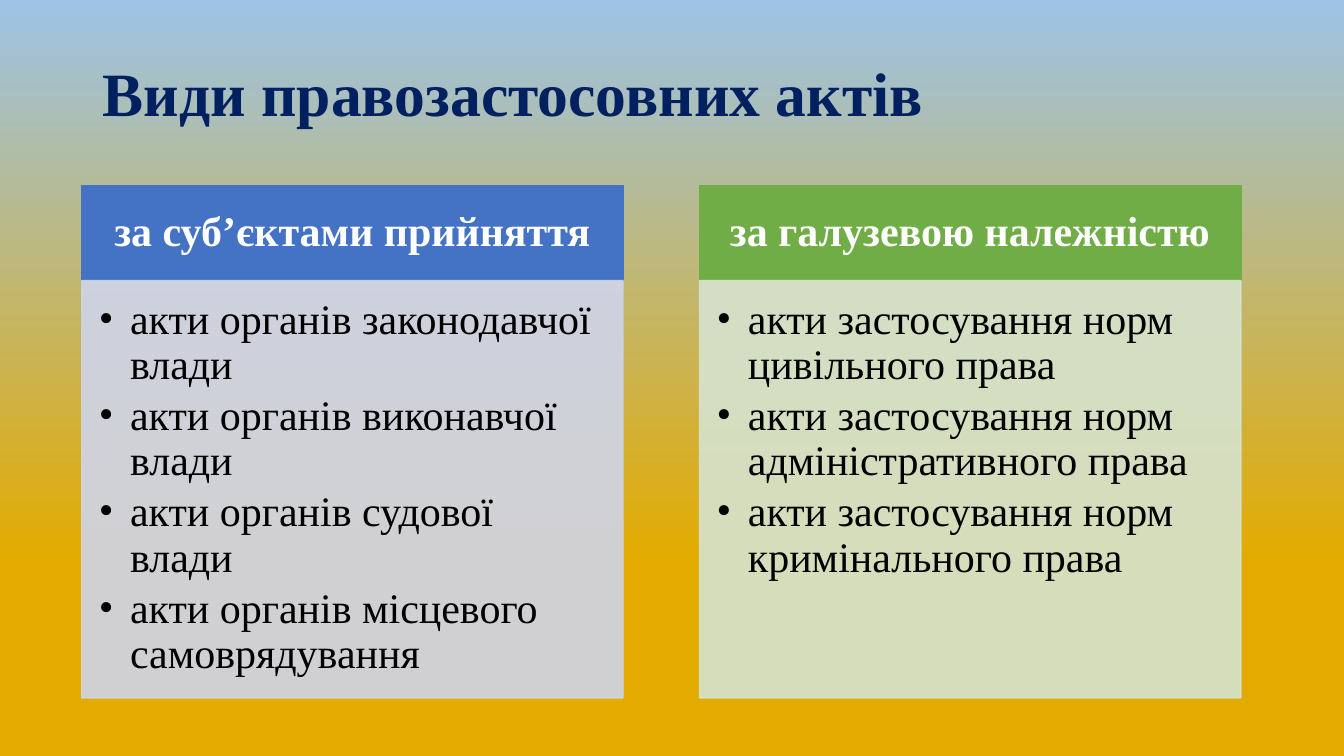
from lxml import etree
from pptx import Presentation
from pptx import util as u
from pptx.dml.color import RGBColor
from pptx.enum import shapes, text
from pptx.oxml.ns import qn

GOLD = RGBColor(0xE3, 0xAB, 0x00)
SKY = RGBColor(0x9D, 0xC3, 0xE6)
NAVY = RGBColor(0x00, 0x20, 0x60)
BLUE = RGBColor(0x44, 0x72, 0xC4)
GREEN = RGBColor(0x70, 0xAD, 0x47)
PALE_BLUE = RGBColor(0xCF, 0xD5, 0xEA)
PALE_GREEN = RGBColor(0xD5, 0xE3, 0xCF)
WHITE = RGBColor(0xFF, 0xFF, 0xFF)
BLACK = RGBColor(0x00, 0x00, 0x00)

FONT = "Times New Roman"
INDENT = u.Inches(0.31)

# Grid: 100 columns by 100 rows over the slide
LEFT, STEP, WIDE = 6.08, 45.97, 40.28
TOP, HEAD, BODY = 24.53, 12.6, 55.2

# Text styles of the three kinds of element
TITLE = dict(size=44, color=NAVY, bold=True)
HEADING = dict(color=WHITE, bold=True, align=text.PP_ALIGN.CENTER,
               pads=(0.23, 0.13, 0.23, 0.13))
LIST = dict(anchor=text.MSO_ANCHOR.TOP, pads=(0.17, 0.17, 0.23, 0.26),
            after=4, bullet=True)

# Heading, heading fill, list fill, list items
CARDS = [
    ("за суб’єктами прийняття", BLUE, PALE_BLUE,
     ["акти органів законодавчої влади",
      "акти органів виконавчої влади",
      "акти органів судової влади",
      "акти органів місцевого самоврядування"]),
    ("за галузевою належністю", GREEN, PALE_GREEN,
     ["акти застосування норм цивільного права",
      "акти застосування норм адміністративного права",
      "акти застосування норм кримінального права"]),
]


def write(frame, lines, size=30, color=BLACK, bold=False,
          align=text.PP_ALIGN.LEFT, anchor=text.MSO_ANCHOR.MIDDLE,
          pads=(0.1, 0.05, 0.1, 0.05), after=0, bullet=False):
    """Fill a text frame, one paragraph for each line."""
    frame.word_wrap = True
    frame.vertical_anchor = anchor
    (frame.margin_left, frame.margin_top,
     frame.margin_right, frame.margin_bottom) = map(u.Inches, pads)
    for i, line in enumerate(lines):
        par = frame.add_paragraph() if i else frame.paragraphs[0]
        par.alignment, par.line_spacing = align, 0.9
        par.space_before, par.space_after = u.Pt(0), u.Pt(after)
        run = par.add_run()
        run.text = line
        run.font.name, run.font.size, run.font.bold = FONT, u.Pt(size), bold
        run.font.color.rgb = color
        if bullet:
            props = par._p.get_or_add_pPr()
            props.set("marL", str(INDENT))
            props.set("indent", str(-INDENT))
            etree.SubElement(props, qn("a:buFont"), typeface=FONT)
            etree.SubElement(props, qn("a:buChar"), char="•")


class Deck:
    """Holds the current slide and draws on its grid."""

    def __init__(self):
        self.prs = Presentation()
        self.prs.slide_width = u.Inches(13.33)
        self.prs.slide_height = u.Inches(7.5)
        self.slide = self.prs.slides.add_slide(self.prs.slide_layouts[5])

    def place(self, col, row, cols, rows):
        """Turn grid units into left, top, width and height."""
        wide, high = self.prs.slide_width / 100, self.prs.slide_height / 100
        return int(col * wide), int(row * high), int(cols * wide), int(rows * high)

    def backdrop(self, low, high, start):
        """Blend upwards from low to high, beginning at start."""
        fill = self.slide.background.fill
        fill.gradient()
        fill.gradient_angle = 90
        for stop, color, pos in zip(fill.gradient_stops, (low, high), (start, 1)):
            stop.color.rgb, stop.position = color, pos

    def title(self, line, *spot):
        box = self.slide.shapes.title
        box.left, box.top, box.width, box.height = self.place(*spot)
        write(box.text_frame, [line], **TITLE)

    def panel(self, lines, paint, spot, style, alpha=100):
        """Draw a filled rectangle with text; alpha is opacity in percent."""
        box = self.slide.shapes.add_shape(shapes.MSO_SHAPE.RECTANGLE,
                                          *self.place(*spot))
        box.shadow.inherit = False
        box.fill.solid()
        box.fill.fore_color.rgb = paint
        box.line.color.rgb, box.line.width = paint, u.Pt(1)
        if alpha < 100:
            for tint in box._element.spPr.iter(qn("a:srgbClr")):
                etree.SubElement(tint, qn("a:alpha"), val=str(alpha * 1000))
        write(box.text_frame, lines, **style)

    def card(self, col, head, dark, pale, items):
        """Stack a heading on a bulleted list."""
        self.panel([head], dark, (col, TOP, WIDE, HEAD), HEADING)
        self.panel(items, pale, (col, TOP + HEAD, WIDE, BODY), LIST, alpha=90)


def main():
    deck = Deck()
    deck.backdrop(GOLD, SKY, 0.26)
    deck.title("Види правозастосовних актів", 6.9, 5.33, 86.25, 14.8)
    for i, card in enumerate(CARDS):
        deck.card(LEFT + i * STEP, *card)
    deck.prs.save("out.pptx")


if __name__ == "__main__":
    main()
